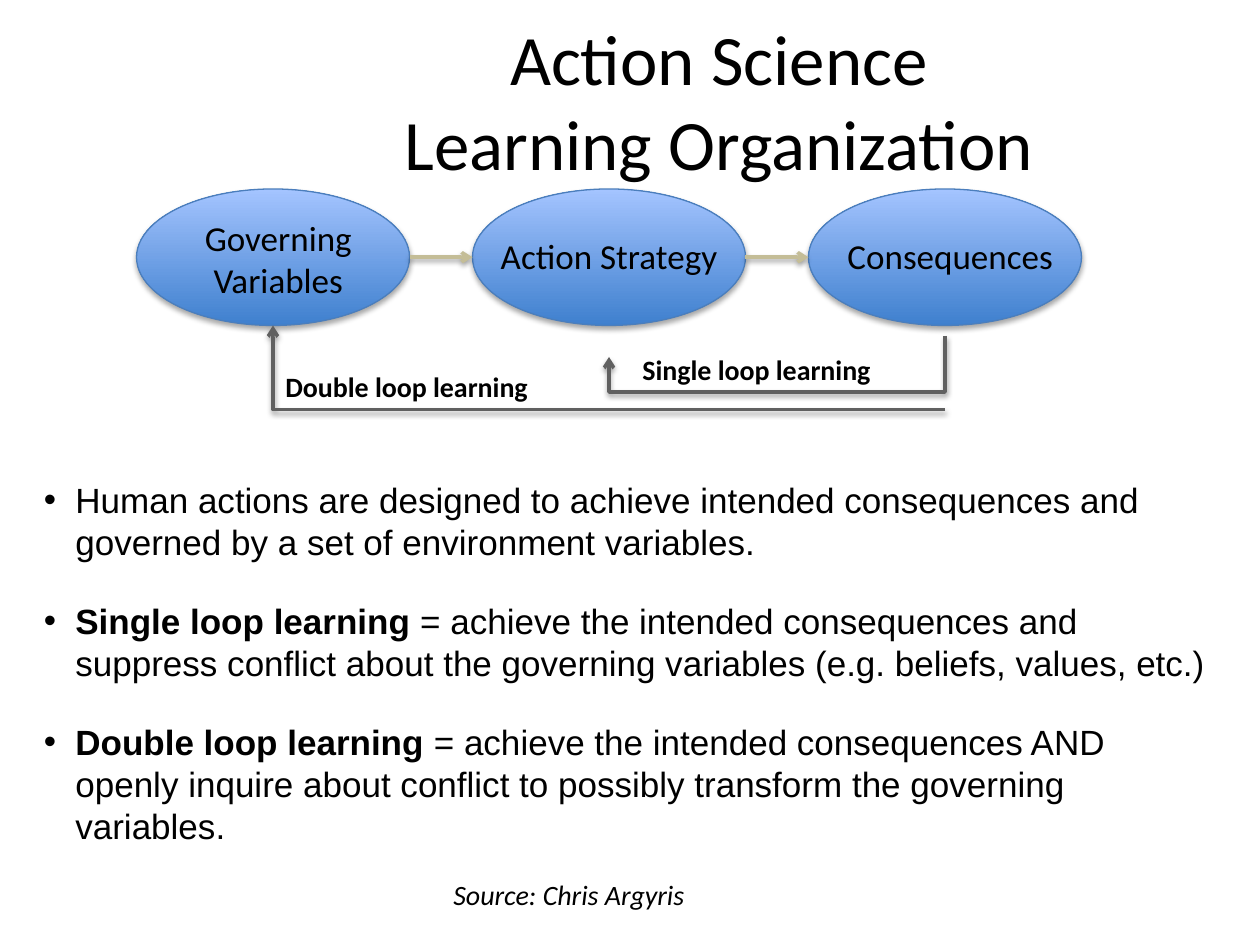
from pptx import Presentation
from pptx.dml.color import RGBColor
from pptx.enum.shapes import MSO_CONNECTOR, MSO_SHAPE
from pptx.enum.text import MSO_ANCHOR, PP_ALIGN
from pptx.oxml import parse_xml
from pptx.oxml.ns import nsdecls, qn
from pptx.util import Pt

TITLE_ONLY = 5


def color(hex_string):
    return RGBColor.from_string(hex_string)


class LoopSlide:
    heading_font, body_font = "Calibri", "Arial"
    ink, outline, flow, loop = "000000", "4B7EBC", "C4BD97", "606060"
    oval_bottom, oval_top = "3F80CE", "A4C4FF"

    def __init__(self, slide):
        self.slide = slide
        self.shapes = slide.shapes

    def style_run(self, run, size, font=None, bold=False, italic=False):
        run.font.size = Pt(size)
        run.font.name = font or self.heading_font
        run.font.bold, run.font.italic = bold, italic
        run.font.color.rgb = color(self.ink)

    def cast_shadow(self, shape, opacity, distance):
        """Give the shape a soft shadow straight below it."""
        shape._element.spPr.append(parse_xml(
            f'<a:effectLst {nsdecls("a")}><a:outerShdw blurRad="{Pt(3.1)}" dist="{Pt(distance)}" '
            f'dir="5400000" rotWithShape="0"><a:srgbClr val="000000">'
            f'<a:alpha val="{opacity * 1000}"/></a:srgbClr></a:outerShdw></a:effectLst>'))

    def finish_arrow(self, arrow, line_color):
        arrow.line.color.rgb = color(line_color)
        arrow.line.width = Pt(2)
        line = arrow._element.spPr.find(qn("a:ln"))
        line.append(parse_xml(f'<a:tailEnd {nsdecls("a")} type="arrow"/>'))
        self.cast_shadow(arrow, 38, 1.6)

    def title(self, text, left, top, width, height):
        title = self.shapes.title
        title.left, title.top = Pt(left), Pt(top)
        title.width, title.height = Pt(width), Pt(height)
        title.text_frame.text = text
        title.text_frame.vertical_anchor = MSO_ANCHOR.MIDDLE
        paragraph = title.text_frame.paragraphs[0]
        paragraph.alignment = PP_ALIGN.CENTER
        for run in paragraph.runs:
            self.style_run(run, 40.5)

    def oval(self, left, top, width, height):
        oval = self.shapes.add_shape(MSO_SHAPE.OVAL, Pt(left), Pt(top), Pt(width), Pt(height))
        oval.fill.gradient()
        oval.fill.gradient_angle = 90
        for stop, shade in zip(oval.fill.gradient_stops, (self.oval_bottom, self.oval_top)):
            stop.color.rgb = color(shade)
        oval.line.color.rgb = color(self.outline)
        oval.line.width = Pt(0.75)
        self.cast_shadow(oval, 35, 1.8)

    def text_frame(self, left, top, width, height):
        frame = self.shapes.add_textbox(Pt(left), Pt(top), Pt(width), Pt(height)).text_frame
        frame.word_wrap = True
        return frame

    def label(self, text, left, top, width, height, size, align=PP_ALIGN.LEFT, **emphasis):
        frame = self.text_frame(left, top, width, height)
        frame.text = text
        frame.paragraphs[0].alignment = align
        self.style_run(frame.paragraphs[0].runs[0], size, **emphasis)

    def bullets(self, items, left, top, width, height):
        """Write bullets from pairs of a bold lead and plain text."""
        frame = self.text_frame(left, top, width, height)
        for index, (lead, rest) in enumerate(items):
            paragraph = frame.add_paragraph() if index else frame.paragraphs[0]
            paragraph.line_spacing, paragraph.space_after = Pt(24), Pt(21)
            properties = paragraph._p.get_or_add_pPr()
            properties.set("marL", str(Pt(18)))
            properties.set("indent", str(Pt(-18)))
            properties.append(parse_xml(f'<a:buFont {nsdecls("a")} typeface="Arial"/>'))
            properties.append(parse_xml(f'<a:buChar {nsdecls("a")} char="•"/>'))
            for text, bold in ((lead, True), (rest, False)):
                if text:
                    run = paragraph.add_run()
                    run.text = text
                    self.style_run(run, 20, self.body_font, bold=bold)

    def flow_arrow(self, start, end, y):
        arrow = self.shapes.add_connector(
            MSO_CONNECTOR.STRAIGHT, Pt(start), Pt(y), Pt(end), Pt(y))
        self.finish_arrow(arrow, self.flow)

    def loop_arrow(self, *points):
        """Draw an angled arrow through the points."""
        first, *others = [(Pt(x), Pt(y)) for x, y in points]
        builder = self.shapes.build_freeform(*first)
        builder.add_line_segments(others, close=False)
        arrow = builder.convert_to_shape()
        arrow.fill.background()
        self.finish_arrow(arrow, self.loop)


def main():
    deck = Presentation()
    deck.slide_width, deck.slide_height = Pt(720), Pt(540)
    page = LoopSlide(deck.slides.add_slide(deck.slide_layouts[TITLE_ONLY]))
    page.title("Action Science\vLearning Organization", 102, 12, 618, 90)

    oval_left, oval_top, oval_width, oval_height, step = 78, 108, 156, 78, 192
    lefts = [oval_left + step * index for index in range(3)]
    governing, strategy, consequences = [left + oval_width / 2 for left in lefts]
    for left in lefts:
        page.oval(left, oval_top, oval_width, oval_height)
    for left, following in zip(lefts, lefts[1:]):
        page.flow_arrow(left + oval_width, following, oval_top + oval_height / 2)

    for name, left, top, width, height in (
        ("Governing Variables", 96, 120, 126, 55.5),
        ("Action Strategy", 270, 130.5, 156, 31.5),
        ("Consequences", 462, 130.5, 162, 31.5),
    ):
        page.label(name, left, top, width, height, 20, PP_ALIGN.CENTER)

    single_y, double_y = 224, 234
    page.loop_arrow((consequences, 192), (consequences, single_y),
                    (strategy, single_y), (strategy, 204))
    page.loop_arrow((consequences, double_y), (governing, double_y),
                    (governing, oval_top + oval_height))
    page.label("Single loop learning", 360, 198, 186, 26.5, 16, bold=True)
    page.label("Double loop learning", 156, 207.5, 186, 26.5, 16, bold=True)

    page.bullets([
        ("", "Human actions are designed to achieve intended consequences and "
             "governed by a set of environment variables."),
        ("Single loop learning ", "= achieve the intended consequences and suppress conflict "
                                  "about the governing variables (e.g. beliefs, values, etc.)"),
        ("Double loop learning ", "= achieve the intended consequences AND openly inquire about "
                                  "conflict to possibly transform the governing variables."),
    ], 18, 270, 684, 234)
    page.label("Source: Chris Argyris", 252, 498, 384, 26.5, 16, italic=True)

    deck.save("out.pptx")


if __name__ == "__main__":
    main()
